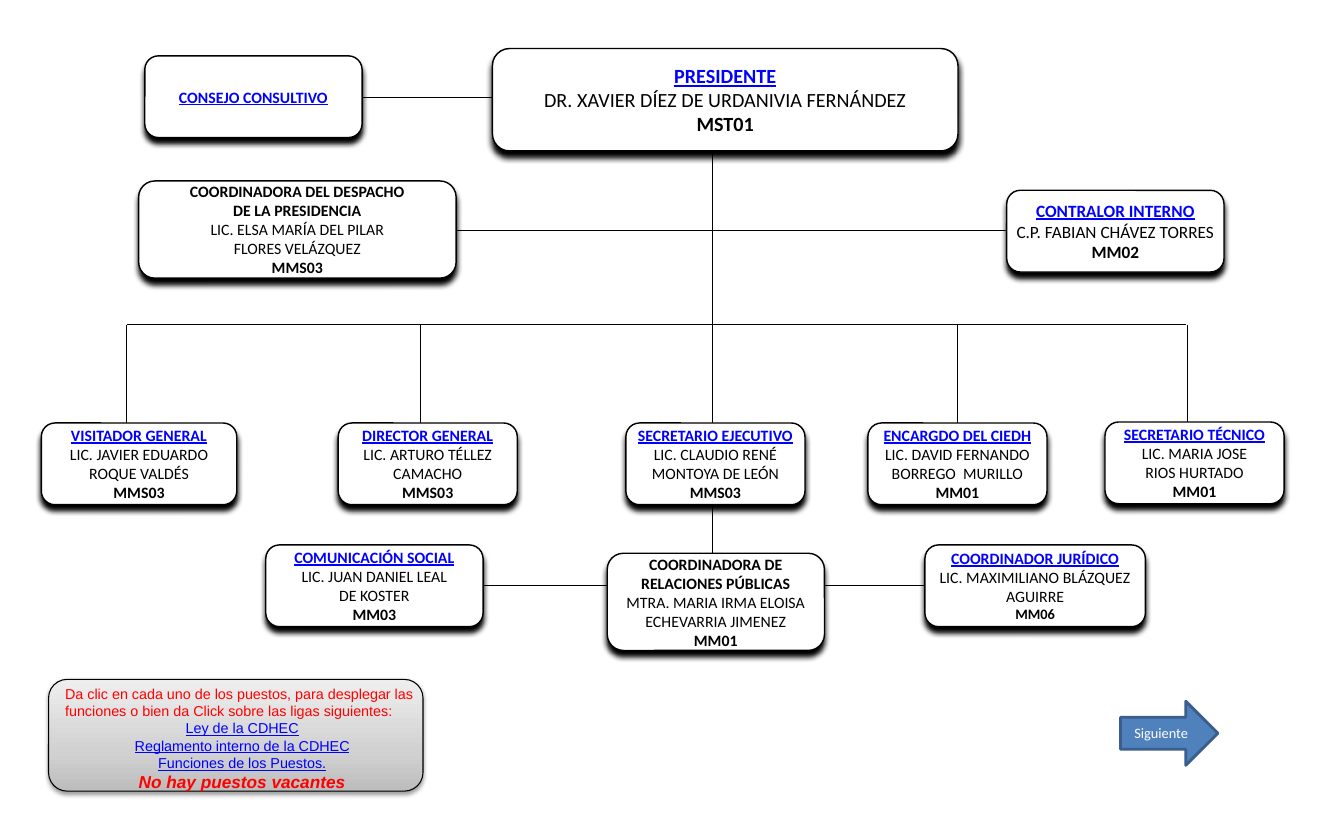
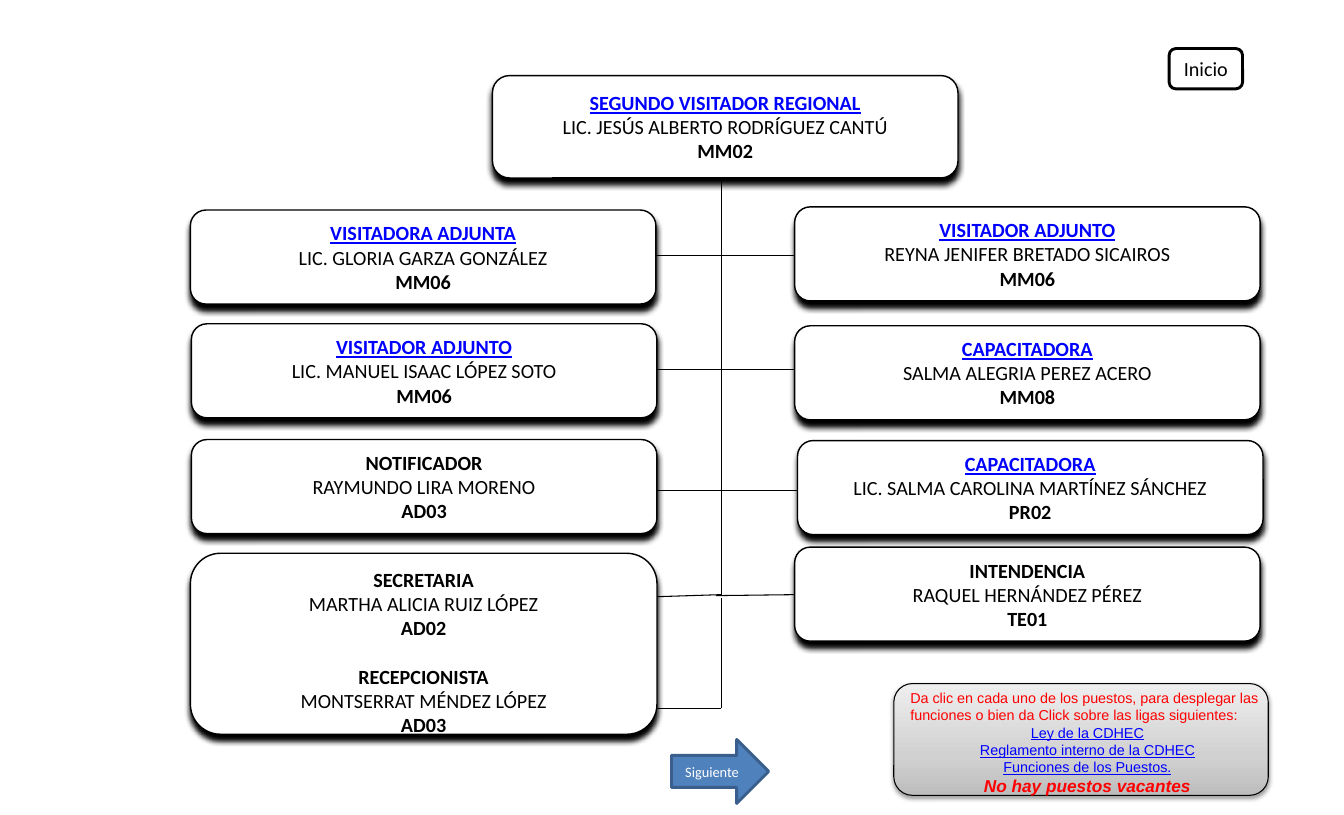
from lxml.etree import SubElement
from pptx import Presentation
from pptx.dml.color import RGBColor
from pptx.enum.shapes import MSO_CONNECTOR as Connector, MSO_SHAPE as Kind
from pptx.enum.text import MSO_ANCHOR as Anchor, PP_ALIGN as Align
from pptx.oxml import parse_xml
from pptx.oxml.ns import nsdecls, qn
from pptx.util import Pt

COLORS = {"paper": "FFFFFF", "ink": "000000", "link": "0000FF", "alert": "FF0000",
          "arrow": "4F81BD", "arrow_edge": "3A5F8C"}
PANEL_STOPS = [(0, "BDBDBD"), (35, "D1D1D1"), (100, "EEEEEE")]

# Text styles
PLAIN = {"color": "ink", "bold": False}
BOLD = {"color": "ink", "bold": True}
LINK = {"color": "link", "bold": True, "underline": True}
SMALL_BOLD = {**BOLD, "size": Pt(10)}
SPACED_BOLD = {**BOLD, "space": 17}
HINT = {"color": "alert", "alignment": Align.LEFT}
PANEL_LINK = {"color": "link", "underline": True}
NOTICE = {"color": "alert", "size": Pt(12), "bold": True, "italic": True}
ARROW_TEXT = {"color": "paper"}

# Box styles; a shadow is opacity in percent, blur and distance
CARD = {"fill": "paper", "edge": "ink", "weight": 1, "shadow": (100, 4, 4), "font": "Calibri",
        "frame": {"word_wrap": False, "vertical_anchor": Anchor.MIDDLE,
                  "margin_left": Pt(12.2), "margin_right": Pt(12.2),
                  "margin_top": Pt(6.5), "margin_bottom": Pt(6.5)}}
TALL_CARD = {**CARD, "frame": {**CARD["frame"], "vertical_anchor": Anchor.TOP,
                               "margin_top": Pt(3.5), "margin_bottom": Pt(0)}}
BUTTON = {"fill": "paper", "edge": "ink", "weight": 2, "font": "Calibri",
          "frame": {"word_wrap": True, "vertical_anchor": Anchor.MIDDLE}}
ARROW = {**BUTTON, "fill": "arrow", "edge": "arrow_edge"}
PANEL = {"edge": "ink", "weight": 0.75, "shadow": (38, 3.1, 1.6)}
PANEL_NOTE = {"font": "Arial", "frame": {"word_wrap": True}}


def write_lines(box, look, size, lines):
    """Fill a box with one paragraph per (style, text) pair."""
    frame = box.text_frame
    for name, value in look["frame"].items():
        setattr(frame, name, value)
    for number, (style, text) in enumerate(lines):
        para = frame.add_paragraph() if number else frame.paragraphs[0]
        para.alignment = style.get("alignment", Align.CENTER)
        para.space_before = Pt(style.get("space", 0))
        span = para.add_run()
        span.text = text
        span.font.name = look["font"]
        span.font.size = Pt(size)
        span.font.color.rgb = RGBColor.from_string(COLORS[style["color"]])
        for name in ("size", "bold", "italic", "underline"):
            if name in style:
                setattr(span.font, name, style[name])


def add_box(page, kind, place, look):
    box = page.shapes.add_shape(kind, *map(Pt, place))
    box.shadow.inherit = False
    box.line.color.rgb = RGBColor.from_string(COLORS[look["edge"]])
    box.line.width = Pt(look["weight"])
    if "fill" in look:
        box.fill.solid()
        box.fill.fore_color.rgb = RGBColor.from_string(COLORS[look["fill"]])
    else:
        stops = "".join(f'<a:gs pos="{pos * 1000}"><a:srgbClr val="{color}"/></a:gs>'
                        for pos, color in PANEL_STOPS)
        box._element.spPr.find(qn("a:prstGeom")).addnext(parse_xml(
            f'<a:gradFill {nsdecls("a")} rotWithShape="1"><a:gsLst>{stops}</a:gsLst>'
            '<a:lin ang="16200000" scaled="0"/></a:gradFill>'))
    if "shadow" in look:
        opacity, blur, distance = look["shadow"]
        box._element.spPr.find(qn("a:effectLst")).append(parse_xml(
            f'<a:outerShdw {nsdecls("a")} blurRad="{Pt(blur)}" dist="{Pt(distance)}" '
            f'dir="5400000" rotWithShape="0"><a:srgbClr val="{COLORS["ink"]}">'
            f'<a:alpha val="{opacity * 1000}"/></a:srgbClr></a:outerShdw>'))
    return box


PANEL_LINES = [
    (HINT, "Da clic en cada uno de los puestos, para desplegar las funciones "
           "o bien da Click sobre las ligas siguientes:"),
    (PANEL_LINK, "Ley de la CDHEC"),
    (PANEL_LINK, "Reglamento interno de la CDHEC"),
    (PANEL_LINK, "Funciones de los Puestos."),
    (NOTICE, "No hay puestos vacantes"),
]

# Direction chart: (x, y, x, y) for lines
TRUNK, BAR, ROW = 496, 226, 294.5
direction_lines = [
    (502.5, 160.5, 734.4, 160.5), (283, 160.5, 502.5, 160.5),
    (252.7, 67.7, 342.7, 67.7),
    (TRUNK, 93.6, TRUNK, BAR), (TRUNK, BAR, TRUNK, 407.5),
    (88.2, BAR, 825.5, BAR),
    (270, 407.5, 502.5, 407.5), (502.5, 407.5, 643.7, 407.5),
]
direction_lines += [(x, BAR, x, 334.8) for x in (88.2, 292.6, 666.4, 826.6)]

# Cards: place, text size, lines
direction_cards = [
    ((342.7, 33.8, 324, 71.3), 14, [
        (LINK, "PRESIDENTE"), (PLAIN, "DR. XAVIER DÍEZ DE URDANIVIA FERNÁNDEZ"),
        (BOLD, "MST01")]),
    ((100.8, 38.9, 151.2, 56.9), 11, [(LINK, "CONSEJO CONSULTIVO")]),
    ((96.5, 126, 221, 67.7), 11, [
        (BOLD, "COORDINADORA DEL DESPACHO"), (BOLD, "DE LA PRESIDENCIA"),
        (PLAIN, "LIC. ELSA MARÍA DEL PILAR"), (PLAIN, "FLORES VELÁZQUEZ"), (BOLD, "MMS03")]),
    ((700.6, 132.5, 151.2, 56.9), 12, [
        (LINK, "CONTRALOR INTERNO"), (PLAIN, "C.P. FABIAN CHÁVEZ TORRES"), (BOLD, "MM02")]),
    ((28.8, ROW, 136, 56.9), 11, [
        (LINK, "VISITADOR GENERAL"), (PLAIN, "LIC. JAVIER EDUARDO"),
        (PLAIN, "ROQUE VALDÉS"), (BOLD, "MMS03")]),
    ((235.4, ROW, 124.6, 56.9), 11, [
        (LINK, "DIRECTOR GENERAL"), (PLAIN, "LIC. ARTURO TÉLLEZ"),
        (PLAIN, "CAMACHO"), (BOLD, "MMS03")]),
    ((435.6, ROW, 124.6, 56.9), 11, [
        (LINK, "SECRETARIO EJECUTIVO"), (PLAIN, "LIC. CLAUDIO RENÉ"),
        (PLAIN, "MONTOYA DE LEÓN"), (BOLD, "MMS03")]),
    ((604, ROW, 124.6, 56.9), 11, [
        (LINK, "ENCARGDO DEL CIEDH"), (PLAIN, "LIC. DAVID FERNANDO"),
        (PLAIN, "BORREGO  MURILLO"), (BOLD, "MM01")]),
    ((769, 293.8, 124.6, 56.9), 11, [
        (LINK, "SECRETARIO TÉCNICO"), (PLAIN, "LIC. MARIA JOSE"),
        (PLAIN, "RIOS HURTADO"), (BOLD, "MM01")]),
    ((185, 379.4, 151.2, 56.9), 11, [
        (LINK, "COMUNICACIÓN SOCIAL"), (PLAIN, "LIC. JUAN DANIEL LEAL"),
        (PLAIN, "DE KOSTER"), (BOLD, "MM03")]),
    ((422.6, 385.2, 151.2, 67.7), 11, [
        (BOLD, "COORDINADORA DE"), (BOLD, "RELACIONES PÚBLICAS"),
        (PLAIN, "MTRA. MARIA IRMA ELOISA"), (PLAIN, "ECHEVARRIA JIMENEZ"), (BOLD, "MM01")]),
    ((643.7, 379.4, 153.4, 56.9), 11, [
        (LINK, "COORDINADOR JURÍDICO"), (PLAIN, "LIC. MAXIMILIANO BLÁZQUEZ"),
        (PLAIN, "AGUIRRE"), (SMALL_BOLD, "MM06")]),
]

# Regional chart
STEM = 501.8
regional_lines = [
    (416.9, 177.8, 582.5, 177.8), (422.6, 257, 587.5, 257), (421.2, 341.3, 586.8, 341.3),
    (433.4, 416.2, STEM, 414), (498.2, 414.7, 553, 414),
    (STEM, 77.8, STEM, 414.7), (STEM, 416.2, STEM, 493.2), (STEM, 493.2, 405.4, 493.2),
]
regional_cards = [((342.7, 52.6, 324, 71.3), 14, [
    (LINK, "SEGUNDO VISITADOR REGIONAL"), (PLAIN, "LIC. JESÚS ALBERTO RODRÍGUEZ CANTÚ"),
    (BOLD, "MM02")])]
for left, top, style, post, person, code in [
    (132.5, 146.2, LINK, "VISITADORA ADJUNTA", "LIC. GLORIA GARZA GONZÁLEZ", "MM06"),
    (133.2, 225.4, LINK, "VISITADOR ADJUNTO", "LIC. MANUEL ISAAC LÓPEZ SOTO", "MM06"),
    (133.2, 306, BOLD, "NOTIFICADOR", "RAYMUNDO LIRA MORENO", "AD03"),
    (553, 144, LINK, "VISITADOR ADJUNTO", "REYNA JENIFER BRETADO SICAIROS", "MM06"),
    (553, 226.8, LINK, "CAPACITADORA", "SALMA ALEGRIA PEREZ ACERO", "MM08"),
    (555, 306.7, LINK, "CAPACITADORA", "LIC. SALMA CAROLINA MARTÍNEZ SÁNCHEZ", "PR02"),
    (553, 380.9, BOLD, "INTENDENCIA", "RAQUEL HERNÁNDEZ PÉREZ", "TE01"),
]:
    regional_cards.append(((left, top, 324, 65.5), 14,
                           [(style, post), (PLAIN, person), (BOLD, code)]))

deck = Presentation()
deck.slide_width, deck.slide_height = Pt(935.3), Pt(567.4)
pages = []
for lines, cards, panel_at, arrow_at in [
    (direction_lines, direction_cards, (33.8, 473), (779.8, 488.2)),
    (regional_lines, regional_cards, (622, 475.9), (467.3, 514.8)),
]:
    page = deck.slides.add_slide(deck.slide_layouts[6])
    pages.append(page)
    for ends in lines:
        line = page.shapes.add_connector(Connector.STRAIGHT, *map(Pt, ends))
        line.line.color.rgb = RGBColor.from_string(COLORS["ink"])
        line.line.width = Pt(0.75)
        SubElement(line._element.spPr, qn("a:effectLst"))
    for place, size, texts in cards:
        write_lines(add_box(page, Kind.ROUNDED_RECTANGLE, place, CARD), CARD, size, texts)
    left, top = panel_at
    add_box(page, Kind.ROUNDED_RECTANGLE, (left, top, 260.6, 77.8), PANEL)
    note = page.shapes.add_textbox(Pt(left + 4.4), Pt(top + 0.4), Pt(260.6), Pt(82))
    write_lines(note, PANEL_NOTE, 10, PANEL_LINES)
    arrow = add_box(page, Kind.RIGHT_ARROW, (*arrow_at, 67.7, 44.6), ARROW)
    write_lines(arrow, ARROW, 10, [(ARROW_TEXT, "Siguiente")])

regional = pages[1]
office = add_box(regional, Kind.ROUNDED_RECTANGLE, (132.5, 385.2, 324.7, 126), TALL_CARD)
write_lines(office, TALL_CARD, 14, [
    (BOLD, "SECRETARIA"), (PLAIN, "MARTHA ALICIA RUIZ LÓPEZ"), (BOLD, "AD02"),
    (SPACED_BOLD, "RECEPCIONISTA"), (PLAIN, "MONTSERRAT MÉNDEZ LÓPEZ"), (BOLD, "AD03")])
home = add_box(regional, Kind.ROUNDED_RECTANGLE, (813.6, 33.8, 51.1, 28.1), BUTTON)
write_lines(home, BUTTON, 14, [(PLAIN, "Inicio")])

deck.save("out.pptx")
